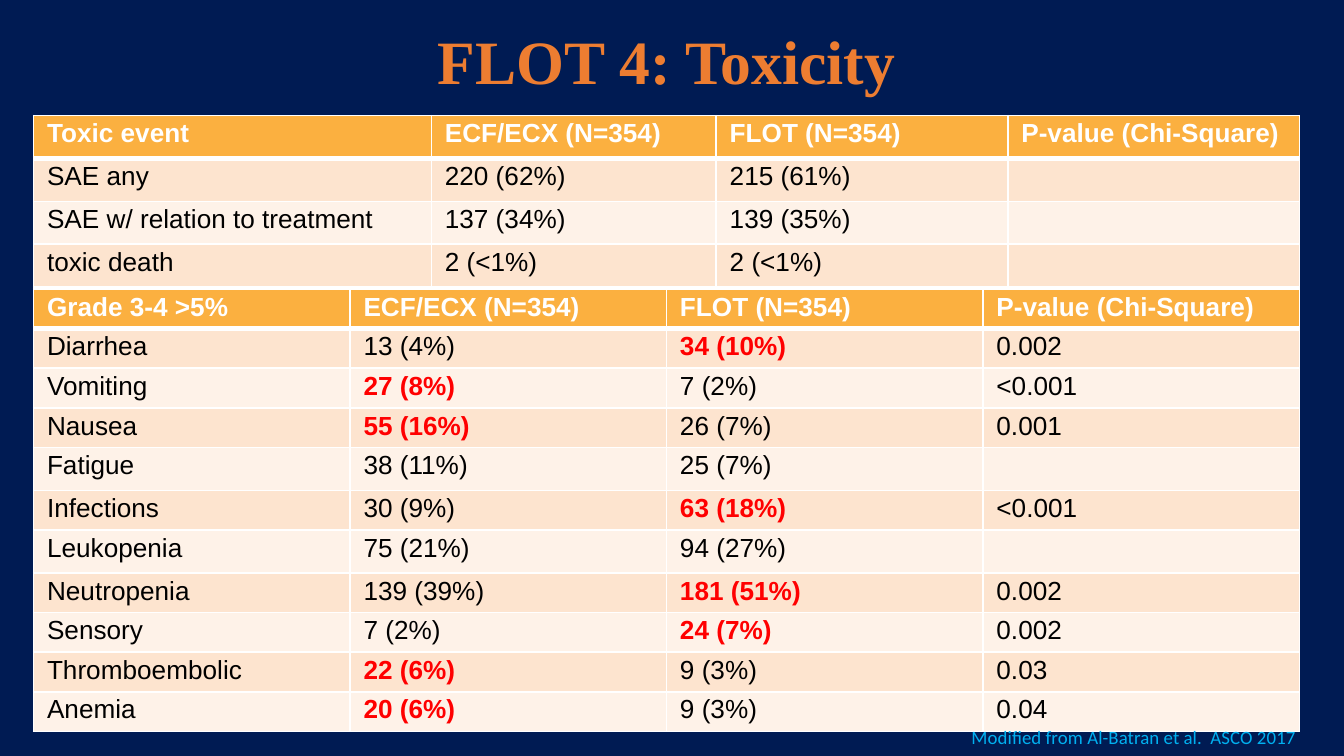
from lxml.etree import SubElement
from pptx import Presentation
from pptx.dml.color import RGBColor
from pptx.enum.text import MSO_ANCHOR, PP_ALIGN
from pptx.oxml.ns import qn
from pptx.util import Inches, Pt

COLORS = {
    "background": "001B53", "title": "ED7D31", "header": "FBB040",
    "band_dark": "FDE4CF", "band_light": "FEF2E8", "border": "FFFFFF",
    "header_text": "FFFFFF", "text": "000000", "highlight": "FF0000",
    "source": "00B0F0",
}
ARMS = ["ECF/ECX (N=354)", "FLOT (N=354)", "P-value (Chi-Square)"]
EVENTS = [
    ["Toxic event", *ARMS],
    ["SAE any", "220 (62%)", "215 (61%)", ""],
    ["SAE w/ relation to treatment", "137 (34%)", "139 (35%)", ""],
    ["toxic death", "2 (<1%)", "2 (<1%)", ""],
]
GRADES = [
    ["Grade 3-4 >5%", *ARMS],
    ["Diarrhea", "13 (4%)", "34 (10%)", "0.002"],
    ["Vomiting", "27 (8%)", "7 (2%)", "<0.001"],
    ["Nausea", "55 (16%)", "26 (7%)", "0.001"],
    ["Fatigue", "38 (11%)", "25 (7%)", ""],
    ["Infections", "30 (9%)", "63 (18%)", "<0.001"],
    ["Leukopenia", "75 (21%)", "94 (27%)", ""],
    ["Neutropenia", "139 (39%)", "181 (51%)", "0.002"],
    ["Sensory", "7 (2%)", "24 (7%)", "0.002"],
    ["Thromboembolic", "22 (6%)", "9 (3%)", "0.03"],
    ["Anemia", "20 (6%)", "9 (3%)", "0.04"],
]


def rgb(name):
    """Return the named colour."""
    return RGBColor.from_string(COLORS[name])


def write(p, text, color, **font):
    """Add a formatted run to a paragraph."""
    r = p.add_run()
    r.text = text
    r.font.color.rgb = rgb(color)
    for key, value in font.items():
        setattr(r.font, key, value)


def add_border(cell, side, width):
    """Draw one edge of a cell."""
    ln = SubElement(cell._tc.get_or_add_tcPr(), qn(f"a:ln{side}"), w=str(Pt(width)))
    fill = SubElement(ln, qn("a:solidFill"))
    SubElement(fill, qn("a:srgbClr"), val=COLORS["border"])


def highlighted_column(row):
    """Return the column of the higher count if the difference is significant."""
    if not row[3]:
        return None
    return max((1, 2), key=lambda col: int(row[col].split()[0]))


def fill_cell(cell, text, row, highlight):
    """Format one cell according to its row."""
    header = row == 0
    for side in "LRTB":
        thick = (row, side) in ((0, "B"), (1, "T"))
        add_border(cell, side, 3 if thick else 1)
    band = "header" if header else "band_dark" if row % 2 else "band_light"
    cell.fill.solid()
    cell.fill.fore_color.rgb = rgb(band)
    p = cell.text_frame.paragraphs[0]
    p.line_spacing = Pt(14)
    if text:
        color = "header_text" if header else "highlight" if highlight else "text"
        write(p, text, color, name="Arial", size=Pt(14), bold=header or highlight)
    else:
        end = SubElement(p._p, qn("a:endParaRPr"), sz="1400")
        SubElement(end, qn("a:latin"), typeface="Arial")


def add_toxicity_table(s, box, rows, widths, heights):
    """Place a toxicity table in its box."""
    table = s.shapes.add_table(len(rows), len(widths), *map(Inches, box)).table
    for column, width in zip(table.columns, widths):
        column.width = Inches(width)
    for i, (values, height) in enumerate(zip(rows, heights)):
        table.rows[i].height = Inches(height)
        red = highlighted_column(values) if i else None
        for j, text in enumerate(values):
            fill_cell(table.cell(i, j), text, i, j == red)


def add_title(s, box):
    """Place the slide title in its box."""
    sp = s.shapes.title
    sp.left, sp.top, sp.width, sp.height = map(Inches, box)
    tf = sp.text_frame
    tf.vertical_anchor = MSO_ANCHOR.MIDDLE
    p = tf.paragraphs[0]
    p.alignment = PP_ALIGN.CENTER
    p.line_spacing = 0.9
    write(p, "FLOT 4: Toxicity", "title", name="Times New Roman", size=Pt(33), bold=True)


def add_source(s, box):
    """Place the citation in its box."""
    tf = s.shapes.add_textbox(*map(Inches, box)).text_frame
    tf.word_wrap = False
    write(tf.paragraphs[0], "Modified from Al-Batran et al.  ASCO 2017", "source",
          name="Calibri", size=Pt(10.13))


def main():
    """Build the toxicity slide."""
    prs = Presentation()
    prs.slide_width = Inches(10)
    prs.slide_height = prs.slide_width * 9 // 16
    s = prs.slides.add_slide(prs.slide_layouts[5])
    s.background.fill.solid()
    s.background.fill.fore_color.rgb = rgb("background")
    add_title(s, (0.65, 0.11, 8.62, 0.74))
    add_toxicity_table(s, (0.25, 2.15, 9.42, 3.24), GRADES,
                       [9.42 / 4] * 4, [0.28] * len(GRADES))
    add_toxicity_table(s, (0.25, 0.86, 9.42, 1.21), EVENTS,
                       [2.96, 2.12, 2.17, 2.17], [0.32, 0.24, 0.24, 0.24])
    add_source(s, (7.13, 5.35, 2.64, 0.27))
    prs.save("out.pptx")


if __name__ == "__main__":
    main()
